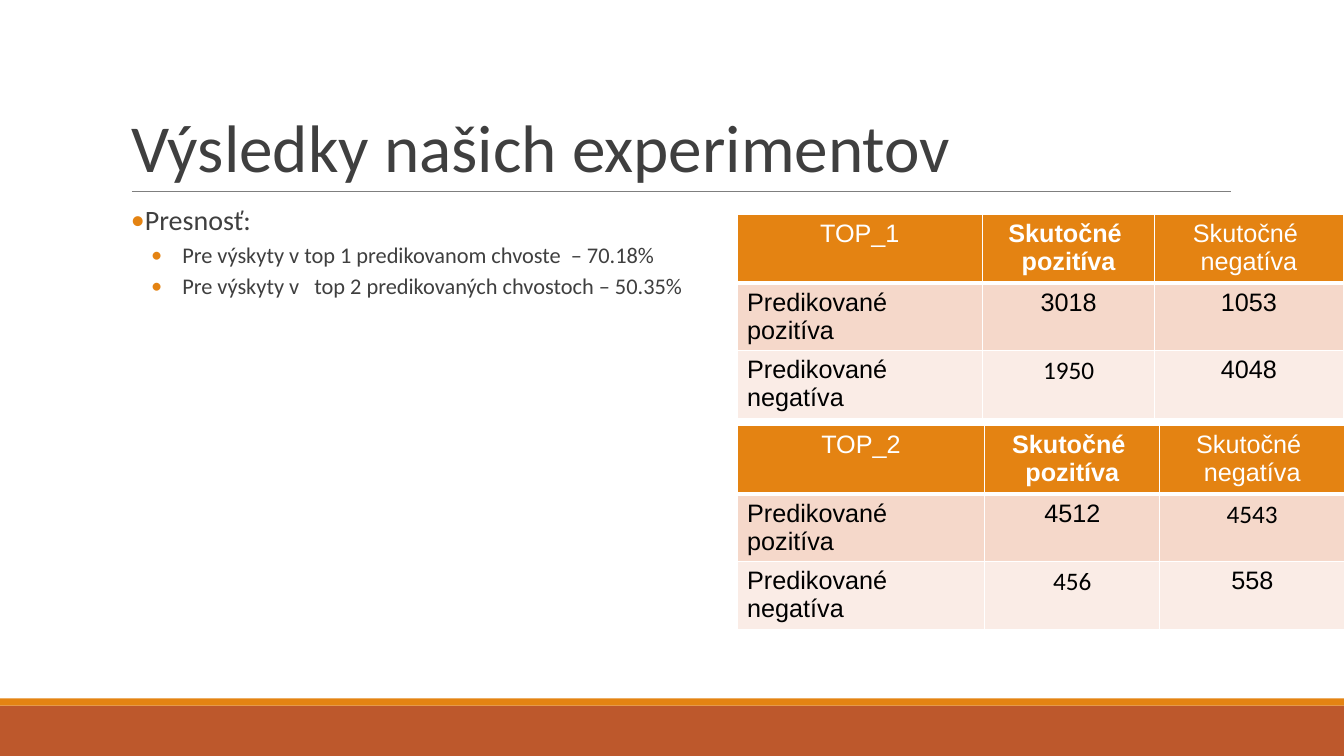
from lxml import etree
from pptx import Presentation
from pptx.dml.color import RGBColor
from pptx.enum.shapes import MSO_CONNECTOR, MSO_SHAPE
from pptx.enum.text import MSO_ANCHOR, PP_ALIGN
from pptx.oxml.ns import qn
from pptx.util import Pt

STRAIGHT = MSO_CONNECTOR.STRAIGHT
RECTANGLE = MSO_SHAPE.RECTANGLE
BOTTOM = MSO_ANCHOR.BOTTOM
LEFT, CENTER = PP_ALIGN.LEFT, PP_ALIGN.CENTER

ORANGE, RUST, WHITE, BLACK = "E48312", "BD582C", "FFFFFF", "000000"
DARK_GREY, MID_GREY = "3F3F3F", "7F7F7F"
ROW_FILLS = (ORANGE, "F5D8CA", "FAECE6")
ROW_HEIGHTS = (49, 48, 48.6)
TABLE_LEFT = 526.5
HEADINGS = ("Skutočné \npozitíva", "Skutočné \nnegatíva")
ROW_LABELS = ("Predikované pozitíva", "Predikované negatíva")
ACCURACIES = (
    "Pre výskyty v top 1 predikovanom chvoste  – 70.18% ",
    "Pre výskyty v   top 2 predikovaných chvostoch – 50.35% ",
)


def color(hex_string):
    return RGBColor.from_string(hex_string)


def set_font(paragraph, size, hex_string, name="Calibri", bold=False):
    font = paragraph.font
    font.name, font.size, font.bold = name, Pt(size), bold
    font.color.rgb = color(hex_string)


def add_bar(slide, top, height, fill):
    bar = slide.shapes.add_shape(RECTANGLE, 0, Pt(top), Pt(960), Pt(height))
    bar.shadow.inherit = False
    bar.fill.solid()
    bar.fill.fore_color.rgb = color(fill)
    bar.line.fill.background()


def add_rule(slide, left, right, top):
    rule = slide.shapes.add_connector(STRAIGHT, Pt(left), Pt(top), Pt(right), Pt(top))
    rule.line.color.rgb = color(MID_GREY)
    rule.line.width = Pt(0.75)
    etree.SubElement(rule._element.spPr, qn("a:effectLst"))


def set_title(slide, text):
    title = slide.shapes.title
    title.left, title.top, title.width, title.height = Pt(86.4), Pt(22.3), Pt(792), Pt(114.5)
    frame = title.text_frame
    frame.text = text
    frame.vertical_anchor = BOTTOM
    paragraph = frame.paragraphs[0]
    paragraph.alignment = LEFT
    paragraph.line_spacing = 0.85
    set_font(paragraph, 48, DARK_GREY)


def add_bullet(paragraph, margin, hanging):
    properties = paragraph._p.get_or_add_pPr()
    properties.set("marL", str(Pt(margin)))
    properties.set("indent", str(-Pt(hanging)))
    bullet_color = etree.SubElement(properties, qn("a:buClr"))
    etree.SubElement(bullet_color, qn("a:srgbClr"), val=ORANGE)
    etree.SubElement(properties, qn("a:buFont"), typeface="Calibri")
    etree.SubElement(properties, qn("a:buChar"), char="•")


def add_accuracy_list(slide, heading, items):
    frame = slide.shapes.add_textbox(Pt(86.4), Pt(144), Pt(420), Pt(318)).text_frame
    frame.word_wrap = True
    frame.text = "\n".join((heading, *items))
    for index, paragraph in enumerate(frame.paragraphs):
        paragraph.line_spacing = 0.9
        if index == 0:
            set_font(paragraph, 20, DARK_GREY)
            add_bullet(paragraph, 7.2, 7.2)
        else:
            paragraph.level = 1
            paragraph.space_before = Pt(5)
            set_font(paragraph, 16, DARK_GREY)
            add_bullet(paragraph, 36.7, 22.3)


def set_borders(cell, bottom_width):
    properties = cell._tc.get_or_add_tcPr()
    for side, width in (("L", 1), ("R", 1), ("T", 1), ("B", bottom_width)):
        line = etree.SubElement(properties, qn(f"a:ln{side}"), w=str(Pt(width)))
        fill = etree.SubElement(line, qn("a:solidFill"))
        etree.SubElement(fill, qn("a:srgbClr"), val=WHITE)


def add_confusion_table(slide, top, widths, name, counts, calibri_cells):
    """Draw a 3 by 3 table; calibri_cells holds the (row, column) pairs set in Calibri."""
    rows = [(name, *HEADINGS)]
    rows += [(label, *values) for label, values in zip(ROW_LABELS, counts)]
    table = slide.shapes.add_table(
        3, 3, Pt(TABLE_LEFT), Pt(top), Pt(sum(widths)), Pt(sum(ROW_HEIGHTS))
    ).table
    for column, width in zip(table.columns, widths):
        column.width = Pt(width)
    for row_index, texts in enumerate(rows):
        table.rows[row_index].height = Pt(ROW_HEIGHTS[row_index])
        is_header = row_index == 0
        for column_index, text in enumerate(texts):
            cell = table.cell(row_index, column_index)
            set_borders(cell, 3 if is_header else 1)
            cell.fill.solid()
            cell.fill.fore_color.rgb = color(ROW_FILLS[row_index])
            cell.text = str(text)
            font_name = "Calibri" if (row_index, column_index) in calibri_cells else "Arial"
            for paragraph in cell.text_frame.paragraphs:
                paragraph.alignment = CENTER if is_header or column_index else LEFT
                set_font(paragraph, 18, WHITE if is_header else BLACK, font_name,
                         bold=is_header and column_index == 1)


def main():
    presentation = Presentation()
    presentation.slide_width, presentation.slide_height = Pt(960), Pt(540)
    slide = presentation.slides.add_slide(presentation.slide_layouts[5])
    add_bar(slide, 504, 36, RUST)
    add_bar(slide, 498.8, 5.2, ORANGE)
    add_rule(slide, 94.3, 879, 136.8)
    set_title(slide, "Výsledky našich experimentov")
    add_confusion_table(slide, 153.4, (175.3, 123, 134.6), "TOP_1",
                        ((3018, 1053), (1950, 4048)), {(2, 1)})
    add_confusion_table(slide, 304, (177, 125, 132), "TOP_2",
                        ((4512, 4543), (456, 558)), {(1, 2), (2, 1)})
    add_accuracy_list(slide, "Presnosť:", ACCURACIES)
    presentation.save("out.pptx")


if __name__ == "__main__":
    main()
